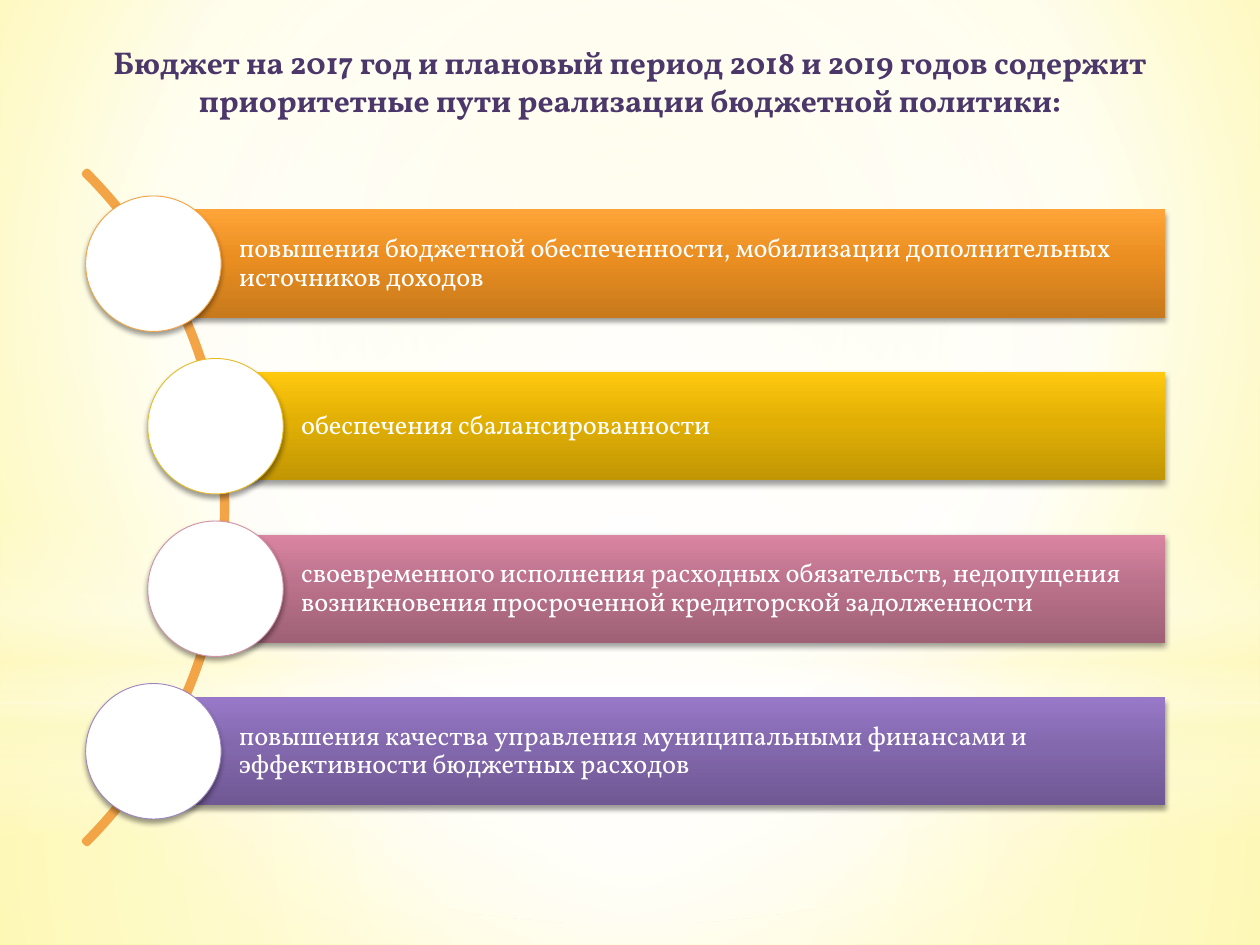
from dataclasses import dataclass

from lxml import etree
from pptx import Presentation
from pptx import util as u
from pptx.dml.color import RGBColor
from pptx.enum import shapes, text
from pptx.oxml.ns import qn

W, H = 10, 7.5
KIND = shapes.MSO_SHAPE


@dataclass(frozen=True)
class Theme:
    font: str = "Vollkorn"
    head: int = 18
    body: int = 15
    ink: str = "4C376B"
    white: str = "FFFFFF"
    cream: str = "FEFAC9"
    arc: str = "F3A447"


T = Theme()

# text, ring colour, bar gradient from bottom to top, indent step
ITEMS = [
    ("повышения бюджетной обеспеченности, мобилизации дополнительных источников доходов",
     "F3A447", ("C7791C", "EA8E21", "FFA438"), 0),
    ("обеспечения сбалансированности",
     "E7BC29", ("C19604", "E2B005", "FFC90F"), 1),
    ("своевременного исполнения расходных обязательств, недопущения "
     "возникновения просроченной кредиторской задолженности",
     "D092A7", ("9F6176", "BB728B", "DA85A2"), 1),
    ("повышения качества управления муниципальными финансами и "
     "эффективности бюджетных расходов",
     "9C85C0", ("6F5893", "8368AD", "9879C9"), 0),
]


def share(x, y, w, h):
    """Turn shares of the slide into a box in inches."""
    return x * W, y * H, w * W, h * H


def put(obj, **form):
    for key, val in form.items():
        setattr(obj, key, val)


def sub(node, tag, **attrs):
    return etree.SubElement(node, qn(tag), {k: str(v) for k, v in attrs.items()})


def tint(node, color, alpha=100):
    clr = sub(node, "a:srgbClr", val=color)
    if alpha < 100:
        sub(clr, "a:alpha", val=alpha * 1000)


def blend(fill, root, stops, angle=None, focus=(50, 50, 50, 50)):
    """Gradient of (position, colour[, opacity]); radial when no angle is given."""
    fill.gradient()
    grad = root.find(".//" + qn("a:gradFill"))
    for kid in list(grad):
        grad.remove(kid)
    row = sub(grad, "a:gsLst")
    for pos, *color in stops:
        tint(sub(row, "a:gs", pos=pos * 1000), *color)
    if angle is not None:
        sub(grad, "a:lin", ang=angle * 60000, scaled=0)
    else:
        ring = sub(grad, "a:path", path="circle")
        sub(ring, "a:fillToRect", **{k: v * 1000 for k, v in zip("ltrb", focus)})


def shape(slide, kind, box, line=None, width=0.5):
    item = slide.shapes.add_shape(kind, *map(u.Inches, box))
    item.shadow.inherit = False
    if line:
        item.line.color.rgb = RGBColor.from_string(line)
        item.line.width = u.Pt(width)
    else:
        item.line.fill.background()
    return item


def shade(item):
    glow = item._element.spPr.find(qn("a:effectLst"))
    drop = sub(glow, "a:outerShdw", blurRad=u.Pt(3.1), dist=u.Pt(2),
               dir=90 * 60000, rotWithShape=0)
    tint(drop, "000000", 38)


def write(frame, words, size, color, bold=False, align=text.PP_ALIGN.LEFT, gap=1.0):
    frame.word_wrap = True
    para = frame.paragraphs[0]
    put(para, alignment=align, line_spacing=gap)
    run = para.add_run()
    run.text = words
    put(run.font, name=T.font, size=u.Pt(size), bold=bold)
    run.font.color.rgb = RGBColor.from_string(color)


def backdrop(slide):
    blend(slide.background.fill, slide._element,
          [(0, "FFF9B5"), (60, T.white), (100, "FFF46F")], focus=(20, 10, 20, 60))
    split = 0.744
    veils = [
        (KIND.RECTANGLE, (0, split, 1, 1 - split), None,
         [(0, T.white, 91), (37, T.white, 76), (100, T.cream, 79)]),
        (KIND.RECTANGLE, (0, 0, 1, split), None,
         [(0, T.white, 89), (48, T.white, 62), (100, T.cream, 79)]),
        (KIND.RECTANGLE, (0, 0.55, 1, 0.333), 90,
         [(0, T.white, 0), (29, T.white, 30), (45, T.cream, 40),
          (55, T.white, 26), (65, T.cream, 60), (100, T.white, 0)]),
        (KIND.OVAL, (0, 0.233, 1, split), None, [(0, T.white), (56, T.white, 0)]),
    ]
    for kind, box, angle, stops in veils:
        veil = shape(slide, kind, share(*box))
        blend(veil.fill, veil._element, stops, angle)


def title(slide, box):
    area = slide.shapes.add_textbox(*map(u.Inches, box))
    write(area.text_frame, "Бюджет на 2017 год и плановый период 2018 и 2019 годов "
          "содержит приоритетные пути реализации бюджетной политики:",
          T.head, T.ink, bold=True, align=text.PP_ALIGN.CENTER)


def curve(slide, box):
    """Thin arc whose rightmost point lies inside the left part of the box."""
    x, y, w, h = box
    size = 1.46 * h
    arc = shape(slide, KIND.BLOCK_ARC,
                (x + 0.13 * w - size, y + (h - size) / 2, size, size), T.arc, 3.78)
    for i, val in enumerate((189, 27, 0.003)):
        arc.adjustments[i] = val
    arc.fill.background()


def entry(slide, box, words, ring, ramp):
    """Bar starting at the centre of a disc that fills the left of the row."""
    x, y, w, h = box
    disc, tall = h * 5 / 6, h * 2 / 3
    bar = shape(slide, KIND.RECTANGLE,
                (x + disc / 2, y + (h - tall) / 2, w - disc / 2, tall))
    blend(bar.fill, bar._element, list(zip((0, 55, 100), ramp)), 270)
    shade(bar)
    pad = u.Inches(0.04)
    put(bar.text_frame, margin_left=u.Inches(0.68), margin_right=pad, margin_top=pad,
        margin_bottom=pad, vertical_anchor=text.MSO_ANCHOR.MIDDLE)
    write(bar.text_frame, words, T.body, T.white, gap=0.9)
    dot = shape(slide, KIND.OVAL, (x, y + (h - disc) / 2, disc, disc), ring)
    dot.fill.solid()
    dot.fill.fore_color.rgb = RGBColor.from_string(T.white)
    shade(dot)


def plan(slide, box):
    curve(slide, box)
    x, y, w, h = box
    row, step = h / len(ITEMS), 0.0575 * w
    for i, (words, ring, ramp, level) in enumerate(ITEMS):
        left = level * step
        entry(slide, (x + left, y + i * row, w - left, row), words, ring, ramp)


def main():
    deck = Presentation()
    put(deck, slide_width=u.Inches(W), slide_height=u.Inches(H))
    slide = deck.slides.add_slide(deck.slide_layouts[6])
    backdrop(slide)
    title(slide, share(0.059, 0.039, 0.882, 0.095))
    plan(slide, share(0.068, 0.193, 0.857, 0.688))
    deck.save("out.pptx")


if __name__ == "__main__":
    main()
